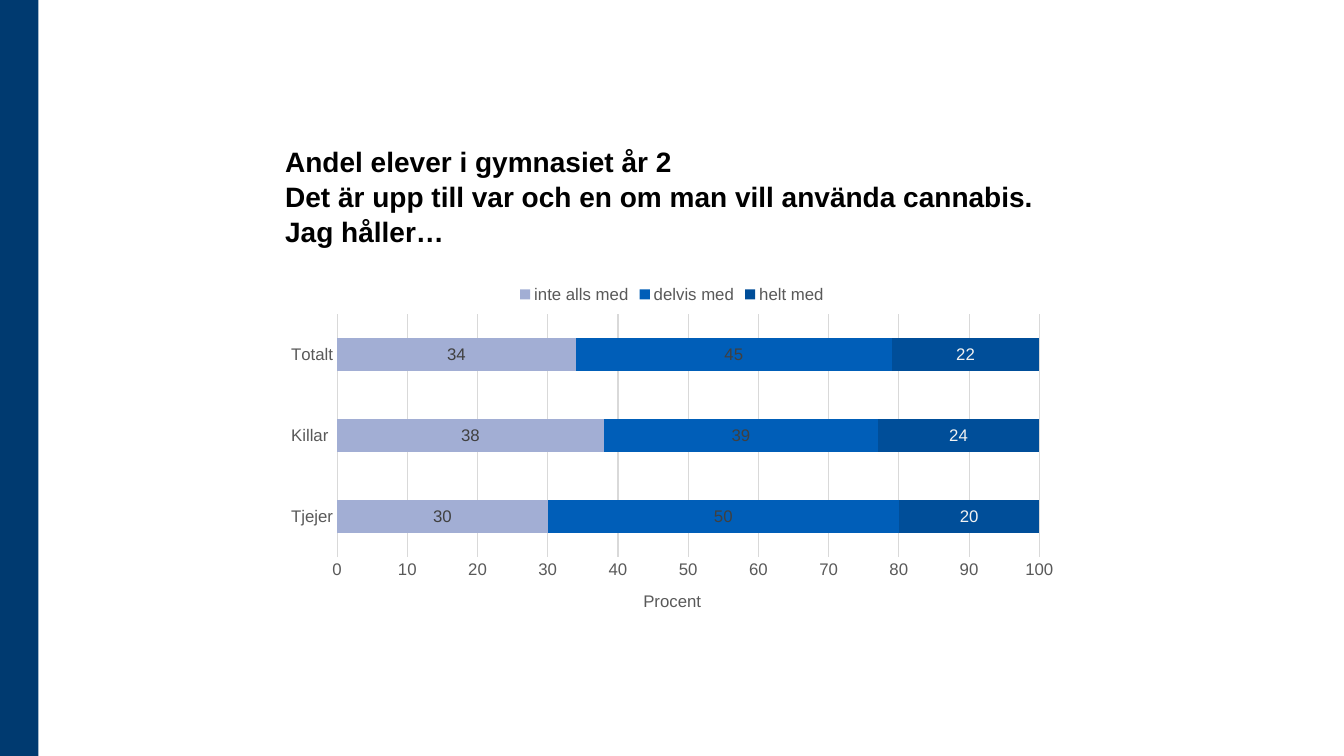
from lxml import etree
from pptx import Presentation
from pptx.chart.data import CategoryChartData
from pptx.dml.color import RGBColor
from pptx.enum.chart import XL_CHART_TYPE, XL_LABEL_POSITION, XL_LEGEND_POSITION, XL_TICK_MARK
from pptx.enum.shapes import MSO_SHAPE
from pptx.enum.text import MSO_ANCHOR
from pptx.oxml.ns import qn
from pptx.util import Inches, Pt

STACKED = XL_CHART_TYPE.BAR_STACKED
CENTER = XL_LABEL_POSITION.CENTER
TOP = XL_LEGEND_POSITION.TOP
NO_TICK = XL_TICK_MARK.NONE
RECTANGLE = MSO_SHAPE.RECTANGLE
BOTTOM = MSO_ANCHOR.BOTTOM

FONT = "Arial"
BLACK = RGBColor(0x00, 0x00, 0x00)
NAVY = RGBColor(0x00, 0x3A, 0x70)
GREY = RGBColor(0x59, 0x59, 0x59)
GRID = RGBColor(0xD9, 0xD9, 0xD9)
DARK = RGBColor(0x40, 0x40, 0x40)
LIGHT = RGBColor(0xF2, 0xF2, 0xF2)
LAVENDER = RGBColor(0xA2, 0xAE, 0xD4)
BLUE = RGBColor(0x00, 0x5E, 0xB8)
DEEP_BLUE = RGBColor(0x00, 0x4E, 0x99)

TITLE_LINES = [
    "Andel elever i gymnasiet år 2",
    "Det är upp till var och en om man vill använda cannabis. Jag håller…",
]
CATEGORIES = ["Tjejer", "Killar ", "Totalt"]
SERIES = [
    ("inte alls med", (30, 38, 34), LAVENDER, DARK),
    ("delvis med", (50, 39, 45), BLUE, DARK),
    ("helt med", (20, 24, 22), DEEP_BLUE, LIGHT),
]


def set_font(font, size, color, bold=False):
    """Set typeface, size, colour and weight."""
    font.name = FONT
    font.size = Pt(size)
    font.bold = bold
    font.color.rgb = color


def set_line(line):
    """Give a chart line the thin grid style."""
    line.color.rgb = GRID
    line.width = Pt(0.75)


def add_band(slide, x, y, w, h):
    """Add the coloured band along the slide edge."""
    sp = slide.shapes.add_shape(RECTANGLE, x, y, w, h)
    sp.shadow.inherit = False
    sp.fill.solid()
    sp.fill.fore_color.rgb = NAVY
    sp.line.fill.background()


def add_title(slide, lines, x, y, w, h):
    """Add the bottom-anchored heading with line breaks."""
    tf = slide.shapes.add_textbox(x, y, w, h).text_frame
    tf.word_wrap = True
    tf.vertical_anchor = BOTTOM
    p = tf.paragraphs[0]
    p.line_spacing = 1.04
    for i, line in enumerate(lines):
        if i:
            p.add_line_break()
        r = p.add_run()
        r.text = line
        set_font(r.font, 20, BLACK, True)


def set_layout(parent, index, **values):
    """Place a chart part by fractions of the chart area."""
    for old in parent.findall(qn("c:layout")):
        parent.remove(old)
    layout = etree.Element(qn("c:layout"))
    manual = etree.SubElement(layout, qn("c:manualLayout"))
    for tag, value in values.items():
        etree.SubElement(manual, qn("c:" + tag)).set("val", str(value))
    parent.insert(index, layout)


def style_axes(chart):
    """Format both axes, the gridlines and the axis title."""
    category, value = chart.category_axis, chart.value_axis
    for axis in (category, value):
        axis.major_tick_mark = axis.minor_tick_mark = NO_TICK
        set_font(axis.tick_labels.font, 12, GREY)
    category.has_major_gridlines = False
    set_line(category.format.line)
    value.minimum_scale, value.maximum_scale, value.major_unit = 0, 100, 10
    value.format.line.fill.background()
    value.tick_labels.number_format = "0"
    value.tick_labels.number_format_is_linked = False
    set_line(value.major_gridlines.format.line)
    r = value.axis_title.text_frame.paragraphs[0].add_run()
    r.text = "Procent"
    set_font(r.font, 12, GREY)
    set_layout(value.axis_title._element, 1,
               xMode="edge", yMode="edge", x=0.46, y=0.88)


def style_series(series, color, label_color):
    """Colour a series and its centred value labels."""
    series.format.fill.solid()
    series.format.fill.fore_color.rgb = color
    labels = series.data_labels
    labels.show_value = True
    labels.position = CENTER
    labels.number_format = "0"
    labels.number_format_is_linked = False
    set_font(labels.font, 12, label_color)


def add_bar_chart(slide, x, y, w, h):
    """Add the stacked bar chart of answers."""
    data = CategoryChartData(number_format="0")
    data.categories = CATEGORIES
    for name, values, _, _ in SERIES:
        data.add_series(name, values)
    chart = slide.shapes.add_chart(STACKED, x, y, w, h, data).chart
    set_font(chart.font, 12, BLACK)
    chart.has_title = False
    chart.has_legend = True
    chart.legend.position = TOP
    chart.legend.include_in_layout = False
    set_font(chart.legend.font, 12, GREY)
    plot = chart.plots[0]
    plot.gap_width, plot.overlap = 150, 100
    plot.vary_by_categories = False
    for series, (_, _, color, label_color) in zip(plot.series, SERIES):
        style_series(series, color, label_color)
    style_axes(chart)
    set_layout(chart._chartSpace.chart.plotArea, 0, layoutTarget="inner",
               xMode="edge", yMode="edge", x=0.078, y=0.112, w=0.885, h=0.681)


def main():
    """Build and save the slide."""
    prs = Presentation()
    prs.slide_width, prs.slide_height = Inches(13.33), Inches(7.5)
    slide = prs.slides.add_slide(prs.slide_layouts[6])
    add_band(slide, 0, 0, Inches(0.38), prs.slide_height)
    left, width = Inches(2.73), Inches(7.87)
    add_title(slide, TITLE_LINES, left, Inches(1.06), width, Inches(1.45))
    add_bar_chart(slide, left, Inches(2.72), width, Inches(3.54))
    prs.save("out.pptx")


if __name__ == "__main__":
    main()
